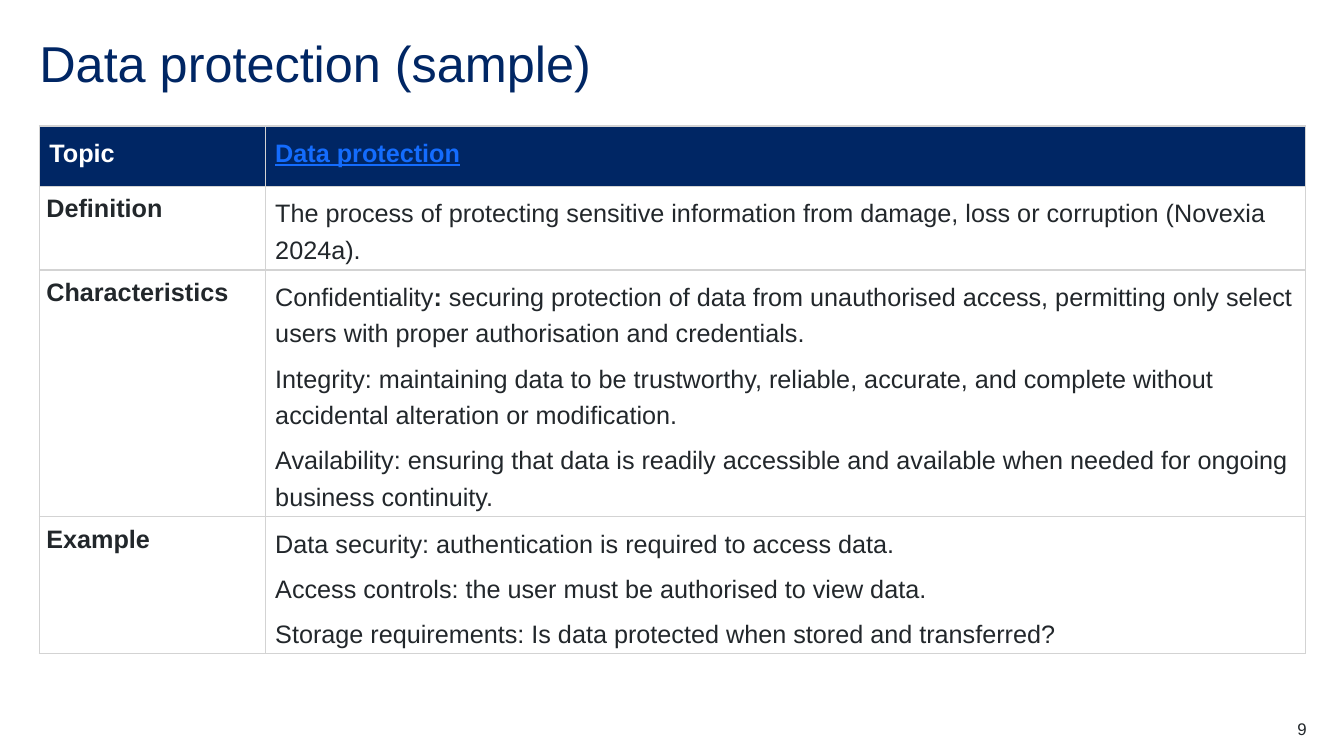
from lxml import etree
from pptx import Presentation
from pptx.dml.color import RGBColor
from pptx.enum.text import MSO_ANCHOR, PP_ALIGN
from pptx.oxml.ns import qn
from pptx.util import Inches, Pt

TOP = MSO_ANCHOR.TOP
LEFT = PP_ALIGN.LEFT
RIGHT = PP_ALIGN.RIGHT
FONT = "Arial"
COLORS = {
    "navy": "002664",
    "white": "FFFFFF",
    "link": "146CFD",
    "text": "22272B",
    "border": "D3D3D3",
}
COLUMN_WIDTHS = [2.24, 10.32]
ROW_HEIGHTS = [0.6, 0.66, 1.23, 1.23]
HEADER = ("Topic", "Data protection")
TOPIC_ROWS = [
    ("Definition", [
        "The process of protecting sensitive information from damage, "
        "loss or corruption (Novexia 2024a).",
    ]),
    ("Characteristics", [
        ("Confidentiality", ":", " securing protection of data from unauthorised access, "
         "permitting only select users with proper authorisation and credentials."),
        "Integrity: maintaining data to be trustworthy, reliable, accurate, "
        "and complete without accidental alteration or modification.",
        "Availability: ensuring that data is readily accessible and available "
        "when needed for ongoing business continuity.",
    ]),
    ("Example", [
        "Data security: authentication is required to access data.",
        "Access controls: the user must be authorised to view data.",
        "Storage requirements: Is data protected when stored and transferred?",
    ]),
]


def format_run(run, size, color, bold=False, underline=False):
    """Apply the slide font, size, colour and emphasis to a run."""
    font = run.font
    font.name = FONT
    font.size = Pt(size)
    font.bold = bold
    font.underline = underline
    font.color.rgb = RGBColor.from_string(COLORS[color])


def format_plain_text(shape, text, size, color, alignment, line_spacing):
    """Fill a shape with one line of text, without insets."""
    frame = shape.text_frame
    frame.text = text
    frame.word_wrap = True
    frame.vertical_anchor = TOP
    frame.margin_left = frame.margin_right = Inches(0)
    frame.margin_top = frame.margin_bottom = Inches(0)
    paragraph = frame.paragraphs[0]
    paragraph.alignment = alignment
    paragraph.line_spacing = line_spacing
    format_run(paragraph.runs[0], size, color)


def add_title(slide, text):
    """Place the slide title in its placeholder."""
    title = slide.shapes.title
    title.left, title.top = Inches(0.39), Inches(0.39)
    title.width, title.height = Inches(12.56), Inches(0.6)
    format_plain_text(title, text, 36, "navy", LEFT, 0.9)


def add_page_number(slide, number):
    """Place the page number at the bottom right."""
    box = slide.shapes.add_textbox(Inches(12.17), Inches(7.13), Inches(0.79), Inches(0.2))
    format_plain_text(box, number, 12, "text", RIGHT, 1.0)


def style_cell(cell, fill):
    """Give a cell its grey borders and its fill."""
    properties = cell._tc.get_or_add_tcPr()
    for side in ("a:lnL", "a:lnR", "a:lnT", "a:lnB"):
        line = etree.SubElement(properties, qn(side), w=str(Pt(1)))
        solid = etree.SubElement(line, qn("a:solidFill"))
        etree.SubElement(solid, qn("a:srgbClr"), val=COLORS["border"])
    cell.fill.solid()
    cell.fill.fore_color.rgb = RGBColor.from_string(COLORS[fill])
    cell.vertical_anchor = TOP


def write_cell(cell, texts, color, bold=False, underline=False):
    """Write paragraphs; a tuple gives runs whose emphasis alternates."""
    frame = cell.text_frame
    for index, text in enumerate(texts):
        paragraph = frame.add_paragraph() if index else frame.paragraphs[0]
        paragraph.line_spacing = 1.3
        paragraph.space_after = Pt(6)
        parts = text if isinstance(text, tuple) else (text,)
        for position, part in enumerate(parts):
            run = paragraph.add_run()
            run.text = part
            format_run(run, 18, color, bold or position % 2 == 1, underline)


def write_label(cell, text):
    """Write a bold row label with narrow insets."""
    cell.margin_left = cell.margin_right = Inches(0.07)
    cell.margin_top = cell.margin_bottom = Inches(0)
    write_cell(cell, [text], "text", bold=True)


def add_topic_table(slide):
    """Build the table with its header and topic rows."""
    frame = slide.shapes.add_table(
        len(ROW_HEIGHTS), len(COLUMN_WIDTHS),
        Inches(0.39), Inches(1.25), Inches(sum(COLUMN_WIDTHS)), Inches(sum(ROW_HEIGHTS)))
    table = frame.table
    for column, width in zip(table.columns, COLUMN_WIDTHS):
        column.width = Inches(width)
    for index, (row, height) in enumerate(zip(table.rows, ROW_HEIGHTS)):
        row.height = Inches(height)
        for cell in row.cells:
            style_cell(cell, "white" if index else "navy")
    topic, subject = HEADER
    write_cell(table.cell(0, 0), [topic], "white", bold=True)
    write_cell(table.cell(0, 1), [subject], "link", bold=True, underline=True)
    for index, (label, texts) in enumerate(TOPIC_ROWS, start=1):
        write_label(table.cell(index, 0), label)
        write_cell(table.cell(index, 1), texts, "text")


def main():
    """Create the presentation and save it."""
    presentation = Presentation()
    presentation.slide_width = Inches(13.33)
    presentation.slide_height = Inches(7.5)
    slide = presentation.slides.add_slide(presentation.slide_layouts[5])
    add_title(slide, "Data protection (sample)")
    add_topic_table(slide)
    add_page_number(slide, "9")
    presentation.save("out.pptx")


if __name__ == "__main__":
    main()
